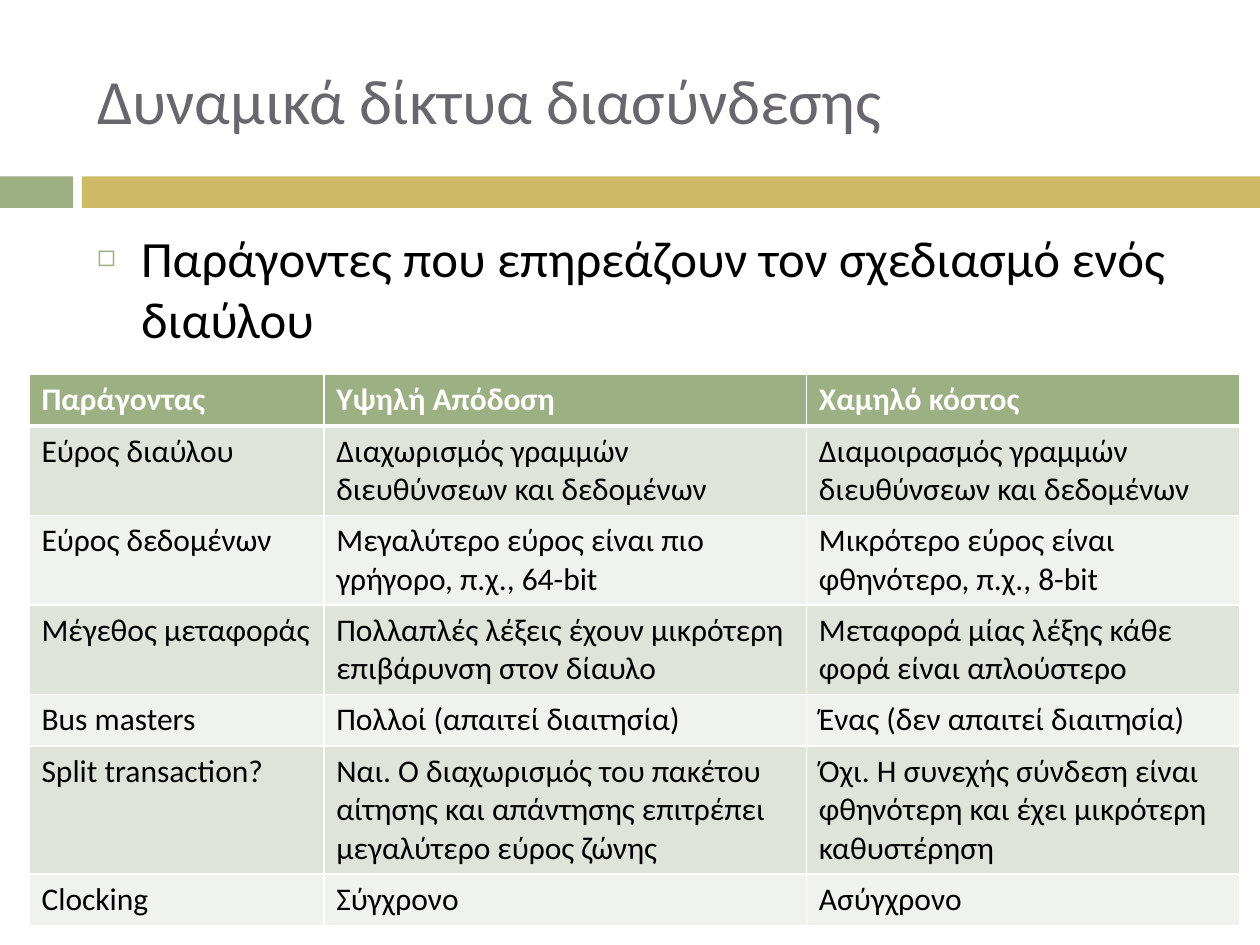
import pptx
import pptx.util
import pptx.dml.color
import pptx.enum.shapes
import pptx.enum.text
import pptx.oxml
from dataclasses import dataclass

Inches, Pt = pptx.util.Inches, pptx.util.Pt
RGB = pptx.dml.color.RGBColor.from_string
NS = 'xmlns:a="http://schemas.openxmlformats.org/drawingml/2006/main"'

TITLE = "Δυναμικά δίκτυα διασύνδεσης"
BULLET = "Παράγοντες που επηρεάζουν τον σχεδιασμό ενός διαύλου"
ROWS = [
    ("Παράγοντας", "Υψηλή Απόδοση", "Χαμηλό κόστος"),
    ("Εύρος διαύλου", "Διαχωρισμός γραμμών διευθύνσεων και δεδομένων",
     "Διαμοιρασμός γραμμών διευθύνσεων και δεδομένων"),
    ("Εύρος δεδομένων", "Μεγαλύτερο εύρος είναι πιο γρήγορο, π.χ., 64-bit",
     "Μικρότερο εύρος είναι φθηνότερο, π.χ., 8-bit"),
    ("Μέγεθος μεταφοράς", "Πολλαπλές λέξεις έχουν μικρότερη επιβάρυνση στον δίαυλο",
     "Μεταφορά μίας λέξης κάθε φορά είναι απλούστερο"),
    ("Bus masters", "Πολλοί (απαιτεί διαιτησία)", "Ένας (δεν απαιτεί διαιτησία)"),
    ("Split transaction?",
     "Ναι. Ο διαχωρισμός του πακέτου αίτησης και απάντησης επιτρέπει μεγαλύτερο εύρος ζώνης",
     "Όχι. Η συνεχής σύνδεση είναι φθηνότερη και έχει μικρότερη καθυστέρηση"),
    ("Clocking", "Σύγχρονο", "Ασύγχρονο"),
]
COLUMN_WIDTHS = (2.34, 3.83, 3.44)
ROW_HEIGHT = 0.41


@dataclass(frozen=True)
class Theme:
    font: str = "Calibri"
    title_size: int = 36
    body_size: int = 29
    table_size: int = 18
    title: str = "69676D"
    text: str = "000000"
    white: str = "FFFFFF"
    green: str = "9CB084"
    gold: str = "CEB966"
    bands: tuple = ("EFF2ED", "DEE4D9")


THEME = Theme()


def style(para, size, color, bold=False):
    para.font.name = THEME.font
    para.font.size = Pt(size)
    para.font.color.rgb = RGB(color)
    para.font.bold = bold


def fill_placeholder(box, text, place, anchor, size, color):
    box.left, box.top, box.width, box.height = map(Inches, place)
    frame = box.text_frame
    frame.text = text
    frame.word_wrap = True
    frame.auto_size = pptx.enum.text.MSO_AUTO_SIZE.NONE
    frame.vertical_anchor = anchor
    para = frame.paragraphs[0]
    para.alignment = pptx.enum.text.PP_ALIGN.LEFT
    style(para, size, color)
    return para


def add_square_bullet(para, indent):
    para.space_before = Pt(7)
    props = para._p.get_or_add_pPr()
    props.set("marL", str(Inches(indent)))
    props.set("indent", str(-Inches(indent)))
    font = props.find(pptx.oxml.ns.qn("a:defRPr"))
    for xml in (f'<a:buClr {NS}><a:srgbClr val="{THEME.green}"/></a:buClr>',
                f'<a:buSzPct {NS} val="60000"/>',
                f'<a:buChar {NS} char="◻"/>'):
        font.addprevious(pptx.oxml.parse_xml(xml))


def add_bar(page, left, width, color):
    bar = page.shapes.add_shape(pptx.enum.shapes.MSO_SHAPE.RECTANGLE,
                                Inches(left), Inches(1.4), Inches(width), Inches(0.25))
    bar.shadow.inherit = False
    bar.fill.solid()
    bar.fill.fore_color.rgb = RGB(color)
    bar.line.fill.background()


def set_borders(cell, top, bottom):
    """Draw white borders; side lines are 1 point wide."""
    props = cell._tc.get_or_add_tcPr()
    for place, (side, width) in enumerate(zip("LRTB", (1, 1, top, bottom))):
        props.insert(place, pptx.oxml.parse_xml(
            f'<a:ln{side} {NS} w="{Pt(width)}"><a:solidFill>'
            f'<a:srgbClr val="{THEME.white}"/></a:solidFill></a:ln{side}>'))


def add_factor_table(page):
    table = page.shapes.add_table(
        len(ROWS), len(COLUMN_WIDTHS), Inches(0.23), Inches(2.97),
        Inches(sum(COLUMN_WIDTHS)), Inches(ROW_HEIGHT * len(ROWS))).table
    for column, width in zip(table.columns, COLUMN_WIDTHS):
        column.width = Inches(width)
    for r, texts in enumerate(ROWS):
        header = r == 0
        table.rows[r].height = Inches(ROW_HEIGHT)
        for c, text in enumerate(texts):
            cell = table.cell(r, c)
            cell.text = text
            cell.fill.solid()
            cell.fill.fore_color.rgb = RGB(THEME.green if header else THEME.bands[r % 2])
            style(cell.text_frame.paragraphs[0], THEME.table_size,
                  THEME.white if header else THEME.text, bold=header)
            set_borders(cell, top=3 if r == 1 else 1, bottom=3 if header else 1)


def main():
    deck = pptx.Presentation()
    deck.slide_width, deck.slide_height = Inches(10), Inches(7.5)
    page = deck.slides.add_slide(deck.slide_layouts[1])
    anchors = pptx.enum.text.MSO_ANCHOR

    add_bar(page, 0, 0.58, THEME.green)
    add_bar(page, 0.65, 9.35, THEME.gold)
    fill_placeholder(page.shapes.title, TITLE, (0.67, 0.25, 8.92, 1.08),
                     anchors.MIDDLE, THEME.title_size, THEME.title)
    point = fill_placeholder(page.placeholders[1], BULLET, (0.67, 1.75, 9.33, 1.3),
                             anchors.TOP, THEME.body_size, THEME.text)
    add_square_bullet(point, 0.35)
    add_factor_table(page)
    deck.save("out.pptx")


if __name__ == "__main__":
    main()
